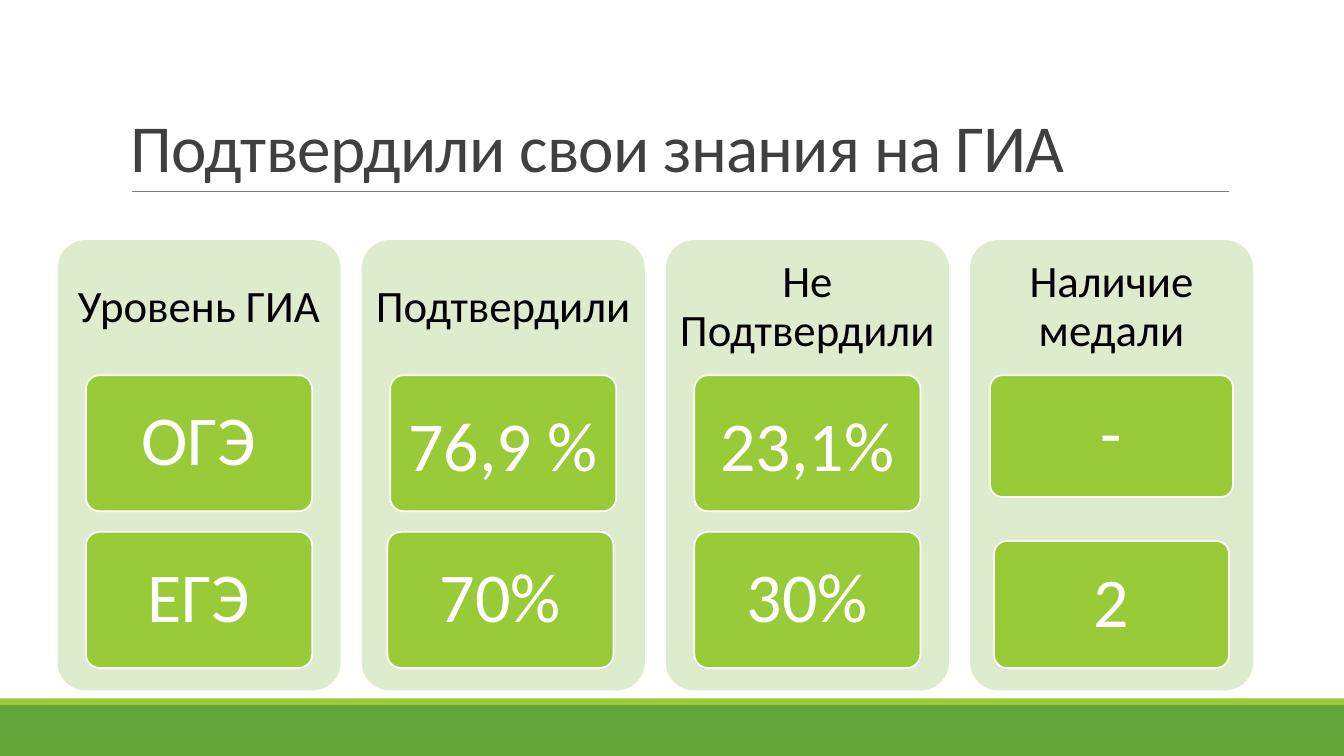
from lxml import etree
from pptx import Presentation
from pptx import util as u
from pptx.dml.color import RGBColor
from pptx.enum import shapes, text
from pptx.oxml import ns

FONT = "Calibri"
TILE = (5.7, 3.43)
COLUMNS = [
    ("Уровень ГИА", [("ОГЭ", TILE, 0, 0.9), ("ЕГЭ", TILE, 0, 0.9)]),
    ("Подтвердили", [("76,9 %", TILE, 0, 1), ("70%", TILE, -0.07, 0.9)]),
    ("Не Подтвердили", [("23,1%", TILE, 0, 1), ("30%", TILE, 0, 0.9)]),
    ("Наличие медали", [("-", (6.12, 3.07), 0, 0.9), ("2", (5.92, 3.2), 0, 0.9)]),
]


def color(value):
    return RGBColor.from_string(value)


def write(shape, content, size, font_color, spacing, inset=0.25,
          align=text.PP_ALIGN.CENTER, anchor=text.MSO_ANCHOR.MIDDLE):
    frame = shape.text_frame
    frame.text = content
    frame.word_wrap = True
    frame.auto_size = text.MSO_AUTO_SIZE.NONE
    frame.vertical_anchor = anchor
    frame.margin_left = frame.margin_right = u.Cm(inset)
    frame.margin_top = frame.margin_bottom = u.Cm(0.25)
    paragraph = frame.paragraphs[0]
    paragraph.alignment = align
    paragraph.line_spacing = spacing
    font = paragraph.runs[0].font
    font.name = FONT
    font.size = u.Pt(size)
    font.color.rgb = color(font_color)
    return paragraph.runs[0]


def add_block(slide, kind, box, fill, outline=None):
    shape = slide.shapes.add_shape(kind, *map(u.Cm, box))
    shape.shadow.inherit = False
    shape.fill.solid()
    shape.fill.fore_color.rgb = color(fill)
    if outline:
        shape.line.color.rgb = color(outline)
        shape.line.width = u.Pt(1.25)
    else:
        shape.line.fill.background()
    if kind == shapes.MSO_SHAPE.ROUNDED_RECTANGLE:
        shape.adjustments[0] = 0.1
    return shape


def add_footer(slide, left, top, width, height):
    stripe = 0.17
    rectangle = shapes.MSO_SHAPE.RECTANGLE
    add_block(slide, rectangle, (left, top + stripe, width, height - stripe), "63A537")
    add_block(slide, rectangle, (left, top, width, stripe), "99CB38")


def add_title(slide, left, top, width, height):
    title = slide.shapes.title
    title.left, title.top = u.Cm(left), u.Cm(top)
    title.width, title.height = u.Cm(width), u.Cm(height)
    run = write(title, "Подтвердили свои знания на ГИА", 48, "404040", 0.85,
                align=text.PP_ALIGN.LEFT, anchor=text.MSO_ANCHOR.BOTTOM)
    title.text_frame.margin_bottom = u.Cm(0.13)
    run.font._element.set("spc", "-50")
    bottom = u.Cm(top + height)
    rule = slide.shapes.add_connector(
        shapes.MSO_CONNECTOR.STRAIGHT,
        u.Cm(left + 0.27), bottom, u.Cm(left + width - 0.01), bottom)
    rule.line.color.rgb = color("808080")
    rule.line.width = u.Pt(0.5)
    etree.SubElement(rule._element.spPr, ns.qn("a:effectLst"))


def add_column(slide, heading, tiles, left, top, width, height):
    rounded = shapes.MSO_SHAPE.ROUNDED_RECTANGLE
    heading_height = 0.3 * height
    add_block(slide, rounded, (left, top, width, height), "DEECCE")
    label = slide.shapes.add_textbox(*map(u.Cm, (left, top, width, heading_height)))
    write(label, heading, 32, "000000", 0.9)
    first_top = top + heading_height
    last_bottom = top + 0.95 * height
    for index, (value, (tile_width, tile_height), shift, spacing) in enumerate(tiles):
        tile_left = left + (width - tile_width) / 2 + shift
        tile_top = first_top if index == 0 else last_bottom - tile_height
        tile = add_block(slide, rounded,
                         (tile_left, tile_top, tile_width, tile_height),
                         "99CB38", "FFFFFF")
        write(tile, value, 50, "FFFFFF", spacing)


def add_columns(slide, left, top, width, height):
    gap = 0.53
    column_width = (width - gap * (len(COLUMNS) - 1)) / len(COLUMNS)
    for index, (heading, tiles) in enumerate(COLUMNS):
        add_column(slide, heading, tiles, left + index * (column_width + gap),
                   top, column_width, height)


def main():
    presentation = Presentation()
    presentation.slide_width = u.Cm(33.87)
    presentation.slide_height = u.Cm(19.05)
    slide = presentation.slides.add_slide(presentation.slide_layouts[5])
    add_footer(slide, 0, 17.6, 33.87, 1.45)
    add_title(slide, 3.05, 0.79, 27.94, 4.03)
    add_columns(slide, 1.45, 6.05, 30.13, 11.35)
    presentation.save("out.pptx")


if __name__ == "__main__":
    main()
